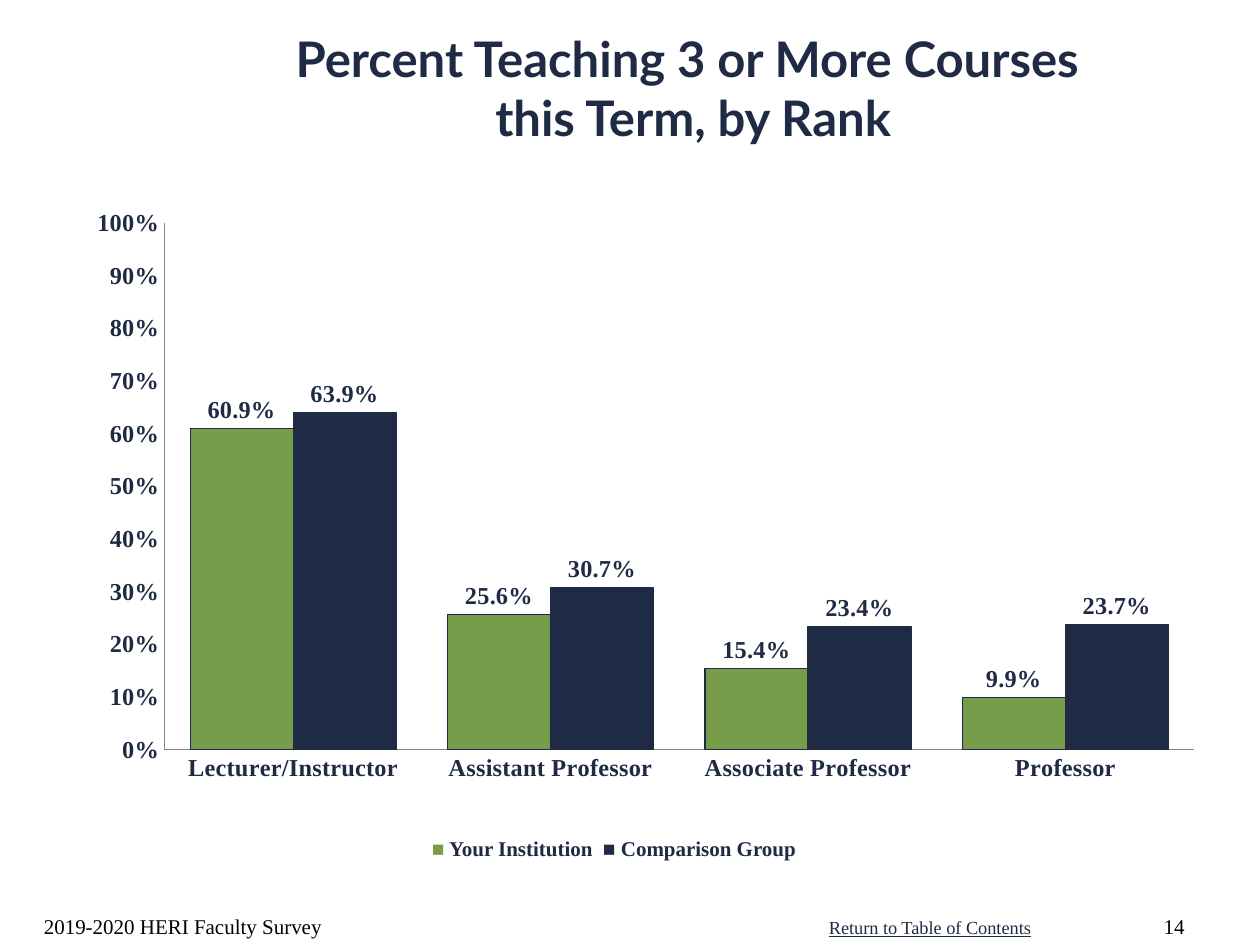
from dataclasses import dataclass

from lxml import etree
from pptx import Presentation
from pptx.chart.data import CategoryChartData
from pptx.dml.color import RGBColor
from pptx.enum import chart as ch, text as tx
from pptx.util import Inches, Pt


@dataclass(frozen=True)
class Theme:
    navy: RGBColor = RGBColor(0x1F, 0x2A, 0x44)
    green: RGBColor = RGBColor(0x78, 0x9D, 0x4A)
    black: RGBColor = RGBColor(0, 0, 0)
    axis: RGBColor = RGBColor(0x86, 0x86, 0x86)
    heading_font: str = "Lato"
    body_font: str = "Times New Roman"
    title_size: float = 28
    chart_size: float = 13.9
    body_size: float = 12
    link_size: float = 10.5


THEME = Theme()
RANKS = ["Lecturer/Instructor", "Assistant Professor",
         "Associate Professor", "Professor"]
SERIES = [
    ("Your Institution", (0.609, 0.256, 0.154, 0.099), THEME.green),
    ("Comparison Group", (0.639, 0.307, 0.234, 0.237), THEME.navy),
]


def style_font(font, size, color, name=THEME.body_font, bold=False):
    font.name, font.size, font.bold = name, Pt(size), bold
    font.color.rgb = color


def place(shape, left, top, width, height):
    shape.left, shape.top = Inches(left), Inches(top)
    shape.width, shape.height = Inches(width), Inches(height)


def add_title(slide, lines):
    title = slide.shapes.title
    place(title, 1, 0.42, 9, 0.92)
    frame = title.text_frame
    frame.auto_size = tx.MSO_AUTO_SIZE.NONE
    frame.vertical_anchor = tx.MSO_ANCHOR.BOTTOM
    frame.margin_top, frame.margin_bottom = 0, Inches(0.18)
    paragraph = frame.paragraphs[0]
    paragraph.alignment = tx.PP_ALIGN.CENTER
    for index, line in enumerate(lines):
        if index:
            paragraph.add_line_break()
        run = paragraph.add_run()
        run.text = line
        style_font(run.font, THEME.title_size, THEME.navy,
                   THEME.heading_font, bold=True)


def add_label(slide, box, runs, size=THEME.body_size, bold=False, wrap=True,
              align=tx.PP_ALIGN.LEFT, anchor=tx.MSO_ANCHOR.TOP):
    """Add a one-line text box from (wording, colour) runs."""
    label = slide.shapes.add_textbox(*map(Inches, box))
    frame = label.text_frame
    frame.word_wrap = wrap
    frame.vertical_anchor = anchor
    paragraph = frame.paragraphs[0]
    paragraph.alignment = align
    for wording, color in runs:
        run = paragraph.add_run()
        run.text = wording
        style_font(run.font, size, color, bold=bold)
    return label


def add_legend(slide):
    runs = []
    for index, (name, _, color) in enumerate(SERIES):
        ending = " " if index < len(SERIES) - 1 else ""
        runs += [("■", color), (f" {name} {ending}".rstrip() + ending * 2,
                                THEME.navy)]
    add_label(slide, (3.33, 6.58, 3.33, 0.3), runs, bold=True)


def fix_plot_area(chart, **fractions):
    """Pin the inner plot area to fractions of the chart frame."""
    plot_area = chart._chartSpace.chart.plotArea
    uri = plot_area.nsmap["c"]
    for old in plot_area.findall(f"{{{uri}}}layout"):
        plot_area.remove(old)
    layout = etree.Element(f"{{{uri}}}layout")
    manual = etree.SubElement(layout, f"{{{uri}}}manualLayout")
    settings = {"layoutTarget": "inner", "xMode": "edge", "yMode": "edge",
                **fractions}
    for tag, value in settings.items():
        etree.SubElement(manual, f"{{{uri}}}{tag}", val=str(value))
    plot_area.insert(0, layout)


def style_axis(axis):
    axis.has_major_gridlines = False
    axis.major_tick_mark = axis.minor_tick_mark = ch.XL_TICK_MARK.NONE
    axis.format.line.color.rgb = THEME.axis
    axis.format.line.width = Pt(0.75)


def add_rank_chart(slide):
    data = CategoryChartData(number_format="0.0%")
    data.categories = RANKS
    for name, shares, _ in SERIES:
        data.add_series(name, shares)
    frame = slide.shapes.add_chart(
        ch.XL_CHART_TYPE.COLUMN_CLUSTERED,
        *map(Inches, (0.58, 1.58, 9.08, 4.75)), data)
    chart = frame.chart
    chart.has_legend = chart.has_title = False
    style_font(chart.font, THEME.chart_size, THEME.navy, bold=True)
    fix_plot_area(chart, x=0.08, y=0.04, w=0.9, h=0.88)

    style_axis(chart.category_axis)
    shares_axis = chart.value_axis
    style_axis(shares_axis)
    shares_axis.minimum_scale, shares_axis.maximum_scale = 0, 1
    shares_axis.major_unit = 0.1
    shares_axis.tick_labels.number_format = "0%"
    shares_axis.tick_labels.number_format_is_linked = False

    plot = chart.plots[0]
    plot.gap_width, plot.overlap = 50, 0
    plot.vary_by_categories = False
    for columns, (_, _, color) in zip(plot.series, SERIES):
        columns.invert_if_negative = False
        columns.format.fill.solid()
        columns.format.fill.fore_color.rgb = color
        columns.format.line.color.rgb = THEME.navy
        columns.format.line.width = Pt(0.75)
        labels = columns.data_labels
        labels.show_value = True
        labels.position = ch.XL_LABEL_POSITION.OUTSIDE_END
        labels.number_format = "0.0%"
        labels.number_format_is_linked = False
        style_font(labels.font, THEME.chart_size, THEME.navy, bold=True)


def add_footer(slide):
    bottom = tx.MSO_ANCHOR.BOTTOM
    add_label(slide, (0.25, 7, 3.17, 0.5),
              [("2019-2020 HERI Faculty Survey", THEME.black)], anchor=bottom)
    contents = add_label(slide, (6.48, 7.22, 1.82, 0.28),
                         [("Return to Table of Contents", THEME.navy)],
                         size=THEME.link_size, wrap=False)
    contents.text_frame.paragraphs[0].runs[0].font.underline = True
    add_label(slide, (9, 7, 0.5, 0.5), [("14", THEME.black)],
              align=tx.PP_ALIGN.RIGHT, anchor=bottom)


def main():
    deck = Presentation()
    deck.slide_width, deck.slide_height = Inches(10), Inches(7.5)
    slide = deck.slides.add_slide(deck.slide_layouts[5])
    add_title(slide, ["Percent Teaching 3 or More Courses ",
                      "this Term, by Rank"])
    add_rank_chart(slide)
    add_legend(slide)
    add_footer(slide)
    deck.save("out.pptx")


if __name__ == "__main__":
    main()
